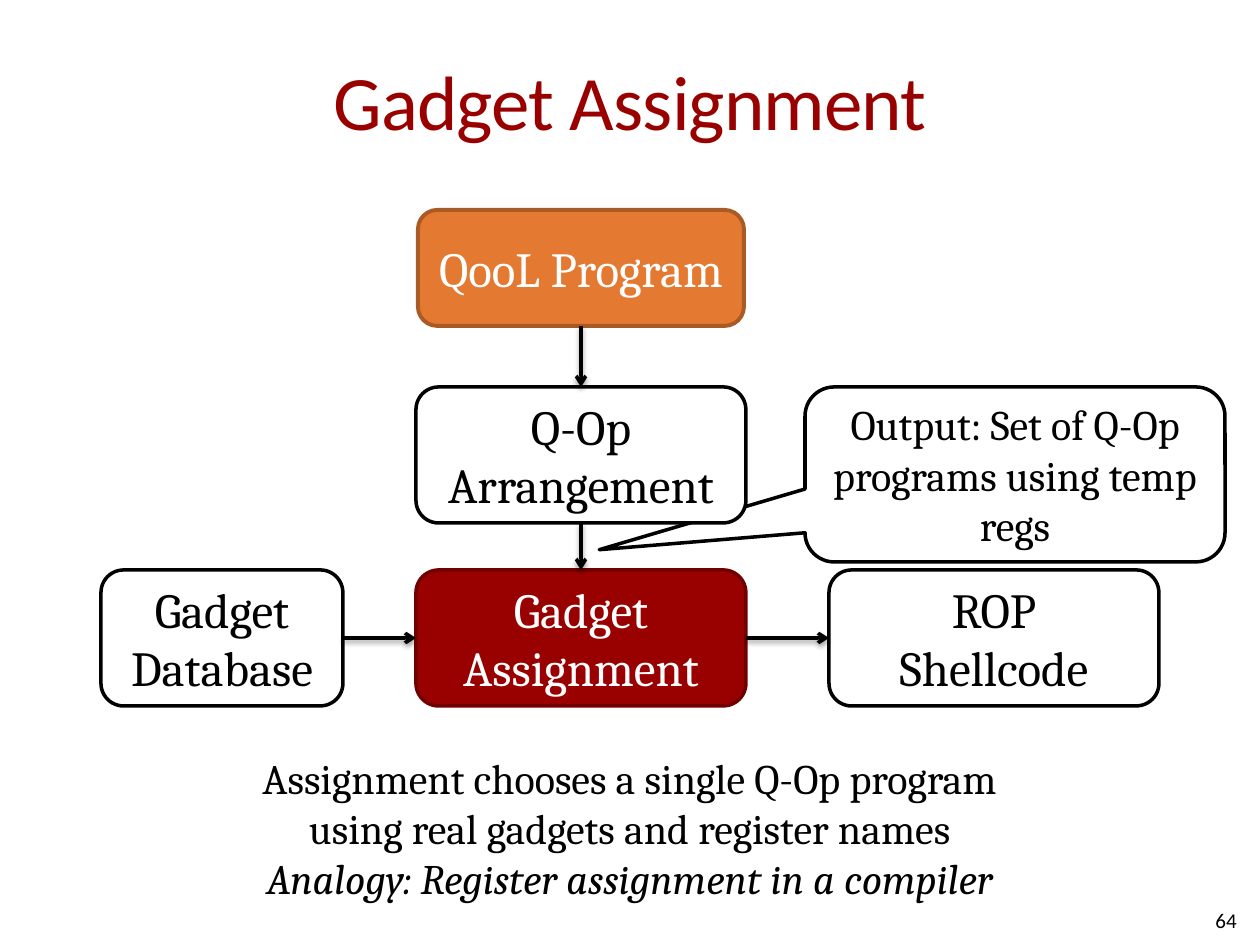
"""Builds the Gadget Assignment flow slide."""
from dataclasses import dataclass

from lxml import etree
from pptx import Presentation
from pptx.dml.color import RGBColor as RGB
from pptx.enum.shapes import MSO_CONNECTOR as Connector, MSO_SHAPE as Shape
from pptx.enum.text import MSO_ANCHOR as Anchor, MSO_AUTO_SIZE as AutoSize, PP_ALIGN as Align
from pptx.oxml import parse_xml
from pptx.oxml.ns import nsdecls, qn
from pptx.util import Emu, Pt

PX = 914400 / 126


@dataclass(frozen=True)
class Theme:
    black: str = "000000"
    white: str = "FFFFFF"
    red: str = "990000"
    dark_red: str = "710000"
    orange: str = "E47932"
    dark_orange: str = "A95A25"
    heading: str = "Calibri"
    body: str = "Cambria"
    title_pt: int = 44
    box_pt: int = 28
    note_pt: int = 24
    number_pt: int = 12
    line_pt: int = 2


theme = Theme()


def px(*values):
    return [Emu(round(v * PX)) for v in values]


def write(sp, text, size, color=theme.black, font=theme.body, align=Align.CENTER, anchor=Anchor.MIDDLE):
    tf = sp.text_frame
    tf.text = text
    tf.word_wrap = True
    tf.vertical_anchor = anchor
    for p in tf.paragraphs:
        p.alignment = align
        for r in p.runs:
            r.font.name = font
            r.font.size = Pt(size)
            r.font.color.rgb = RGB.from_string(color)


prs = Presentation()
prs.slide_width, prs.slide_height = px(1260, 945)
s = prs.slides.add_slide(prs.slide_layouts[5])

title = s.shapes.title
title.left, title.top, title.width, title.height = px(63, 21, 1134, 158)
write(title, "Gadget Assignment", theme.title_pt, theme.red, theme.heading)
title.text_frame.margin_left = title.text_frame.margin_right = 0
title.text_frame.paragraphs[0].runs[0].font._element.set("spc", "-50")

number = s.shapes.add_textbox(*px(955, 895, 294, 50))
write(number, "64", theme.number_pt, font=theme.heading, align=Align.RIGHT)

plain = (theme.white, theme.black, theme.black)
boxes = [
    ("callout", "Output: Set of Q-Op programs using temp regs", (805, 387, 420, 175), plain),
    ("program", "QooL Program", (418, 210, 326, 116), (theme.orange, theme.dark_orange, theme.white)),
    ("assignment", "Gadget\vAssignment", (416, 570, 330, 136), (theme.red, theme.dark_red, theme.white)),
    ("arrangement", "Q-Op\vArrangement", (416, 387, 330, 136), plain),
    ("database", "Gadget\vDatabase", (101, 570, 242, 136), plain),
    ("shellcode", "ROP\vShellcode", (829, 570, 330, 136), plain),
]
nodes = {}
for name, text, frame, (fill, line, ink) in boxes:
    is_callout = name == "callout"
    kind = Shape.ROUNDED_RECTANGULAR_CALLOUT if is_callout else Shape.ROUNDED_RECTANGLE
    sp = s.shapes.add_shape(kind, *px(*frame))
    sp.shadow.inherit = False
    sp.fill.solid()
    sp.fill.fore_color.rgb = RGB.from_string(fill)
    sp.line.color.rgb = RGB.from_string(line)
    sp.line.width = Pt(2.25 if name == "program" else theme.line_pt)
    write(sp, text, theme.note_pt if is_callout else theme.box_pt, ink)
    nodes[name] = sp
nodes["callout"].adjustments[0] = -0.99
nodes["callout"].adjustments[1] = 0.43

TOP, LEFT, BOTTOM, RIGHT = range(4)
flows = [
    ("program", BOTTOM, "arrangement", TOP),
    ("arrangement", BOTTOM, "assignment", TOP),
    ("database", RIGHT, "assignment", LEFT),
    ("assignment", RIGHT, "shellcode", LEFT),
]
for start, start_site, end, end_site in flows:
    arrow = s.shapes.add_connector(Connector.STRAIGHT, 0, 0, 0, 0)
    arrow.begin_connect(nodes[start], start_site)
    arrow.end_connect(nodes[end], end_site)
    arrow.line.color.rgb = RGB.from_string(theme.black)
    arrow.line.width = Pt(theme.line_pt)
    etree.SubElement(arrow.line._get_or_add_ln(), qn("a:tailEnd"), type="arrow")
    arrow._element.spPr.append(parse_xml(
        f'<a:effectLst {nsdecls("a")}><a:outerShdw blurRad="{Pt(3.1)}" dist="{Pt(1.6)}" dir="5400000"'
        f' rotWithShape="0"><a:srgbClr val="{theme.black}"><a:alpha val="38000"/></a:srgbClr>'
        '</a:outerShdw></a:effectLst>'))

summary = s.shapes.add_textbox(*px(199, 746, 861, 165))
write(summary, "Assignment chooses a single Q-Op program using real gadgets and register names\n"
      "Analogy: Register assignment in a compiler", theme.note_pt, anchor=Anchor.TOP)
summary.text_frame.auto_size = AutoSize.SHAPE_TO_FIT_TEXT
summary.text_frame.paragraphs[1].runs[0].font.italic = True

prs.save("out.pptx")
